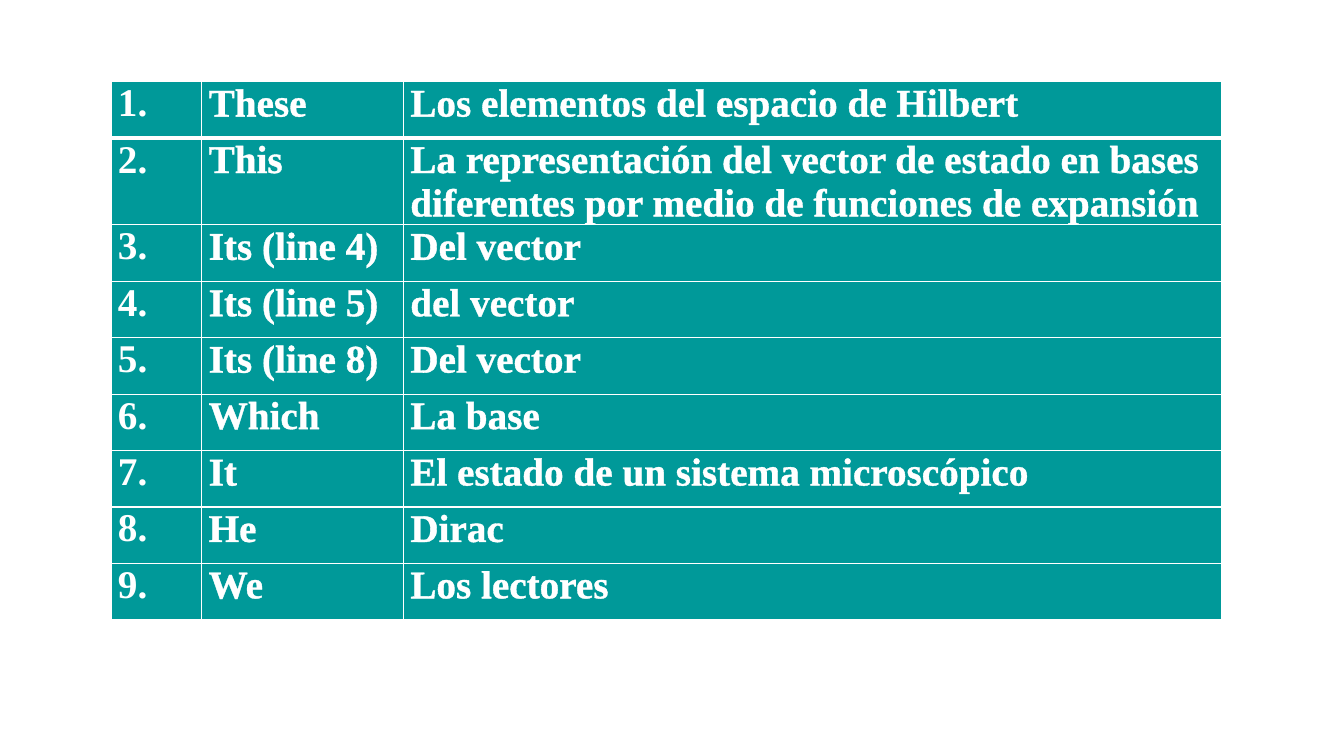
from lxml.etree import SubElement
from pptx import Presentation
from pptx.dml.color import RGBColor
from pptx.oxml.ns import qn
from pptx.util import Inches, Pt

REFERENCES = [
    ("These", "Los elementos del espacio de Hilbert"),
    ("This", "La representación del vector de estado en bases "
             "diferentes por medio de funciones de expansión"),
    ("Its (line 4)", "Del vector"),
    ("Its (line 5)", "del vector"),
    ("Its (line 8)", "Del vector"),
    ("Which", "La base"),
    ("It", "El estado de un sistema microscópico"),
    ("He", "Dirac"),
    ("We", "Los lectores"),
]
COLORS = {"cell": "009999", "white": "FFFFFF"}
COLUMN_WIDTHS = [0.9, 2, 8.12]
ROW_HEIGHT, LONG_ROW_HEIGHT = 0.56, 0.51
LEFT, TOP, TABLE_HEIGHT = 1.1, 0.81, 5.39
THIN, THICK, TEXT_OUTLINE = 1, 3, 0.75
MARGINS = {"margin_left": 0.07, "margin_top": 0, "margin_right": 0.07, "margin_bottom": 0}
FONT = {"name": "Times New Roman", "size": Pt(28), "bold": True}


def add_line(parent, tag, width):
    """Add a solid white line element of the given point width."""
    line = SubElement(parent, qn(tag), w=str(Pt(width)))
    SubElement(SubElement(line, qn("a:solidFill")), qn("a:srgbClr"), val=COLORS["white"])
    return line


def fill_cell(cell, text, row, outlined):
    """Write one cell with its borders, fill and text format."""
    for name, margin in MARGINS.items():
        setattr(cell, name, Inches(margin))
    properties = cell._tc.get_or_add_tcPr()
    widths = {"L": THIN, "R": THIN, "T": THICK if row == 1 else THIN,
              "B": THICK if row == 0 else THIN}
    for side, width in widths.items():
        add_line(properties, f"a:ln{side}", width)
    cell.fill.solid()
    cell.fill.fore_color.rgb = RGBColor.from_string(COLORS["cell"])
    span = cell.text_frame.paragraphs[0].add_run()
    span.text = text
    for name, value in FONT.items():
        setattr(span.font, name, value)
    span.font.color.rgb = RGBColor.from_string(COLORS["white"])
    if outlined:
        run_properties = span._r.get_or_add_rPr()
        run_properties.insert(0, add_line(run_properties, "a:ln", TEXT_OUTLINE))


def main():
    """Build the slide with the table of references."""
    deck = Presentation()
    deck.slide_width, deck.slide_height = Inches(13.33), Inches(7.5)
    page = deck.slides.add_slide(deck.slide_layouts[6])
    frame = page.shapes.add_table(
        len(REFERENCES), len(COLUMN_WIDTHS), Inches(LEFT), Inches(TOP),
        Inches(sum(COLUMN_WIDTHS)), Inches(TABLE_HEIGHT))
    table = frame.table
    for column, width in zip(table.columns, COLUMN_WIDTHS):
        column.width = Inches(width)
    for row, reference in enumerate(REFERENCES):
        table.rows[row].height = Inches(LONG_ROW_HEIGHT if row == 1 else ROW_HEIGHT)
        for column, text in enumerate((f"{row + 1}.", *reference)):
            fill_cell(table.cell(row, column), text, row, column > 0)
    frame.height = Inches(TABLE_HEIGHT)
    deck.save("out.pptx")


if __name__ == "__main__":
    main()
